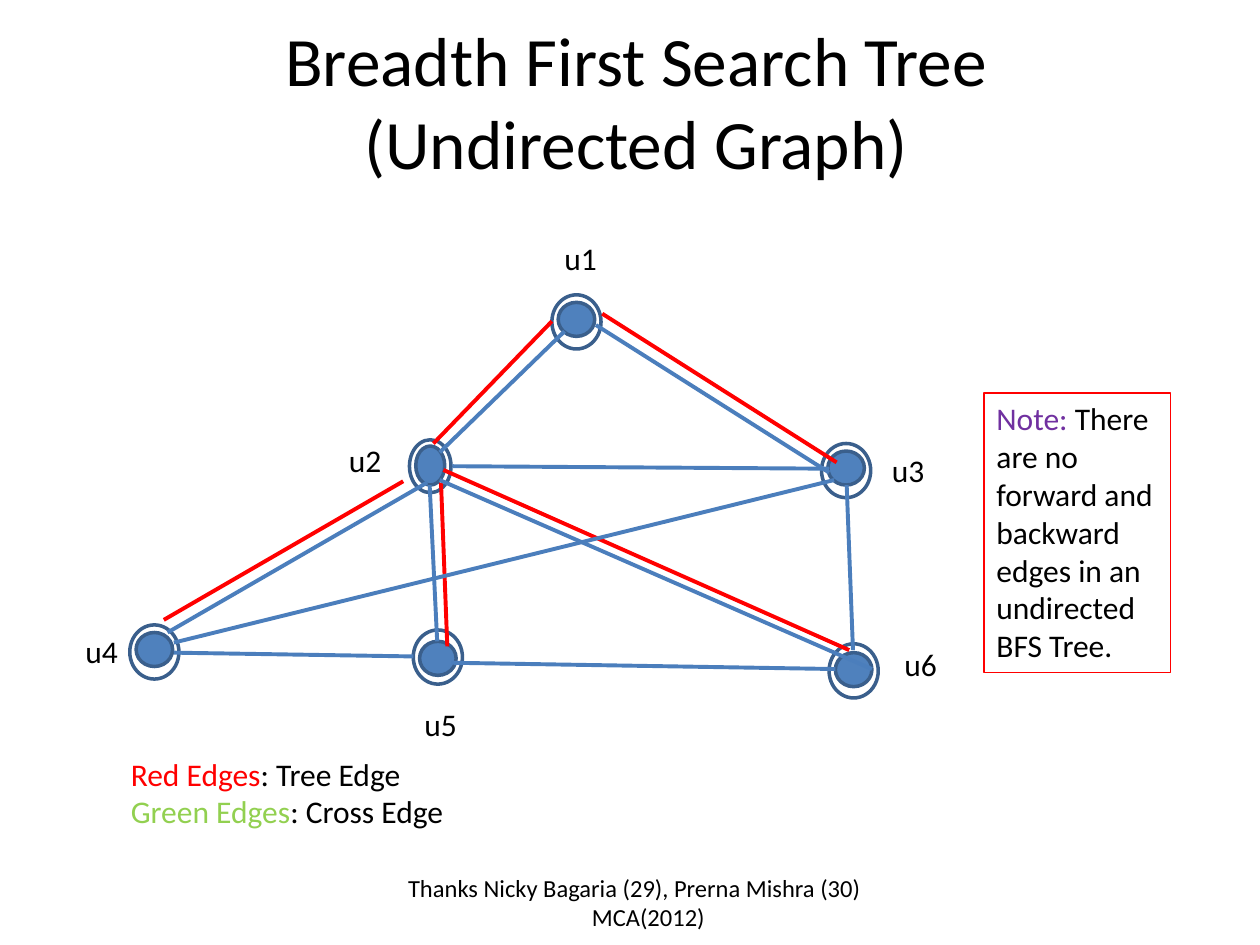
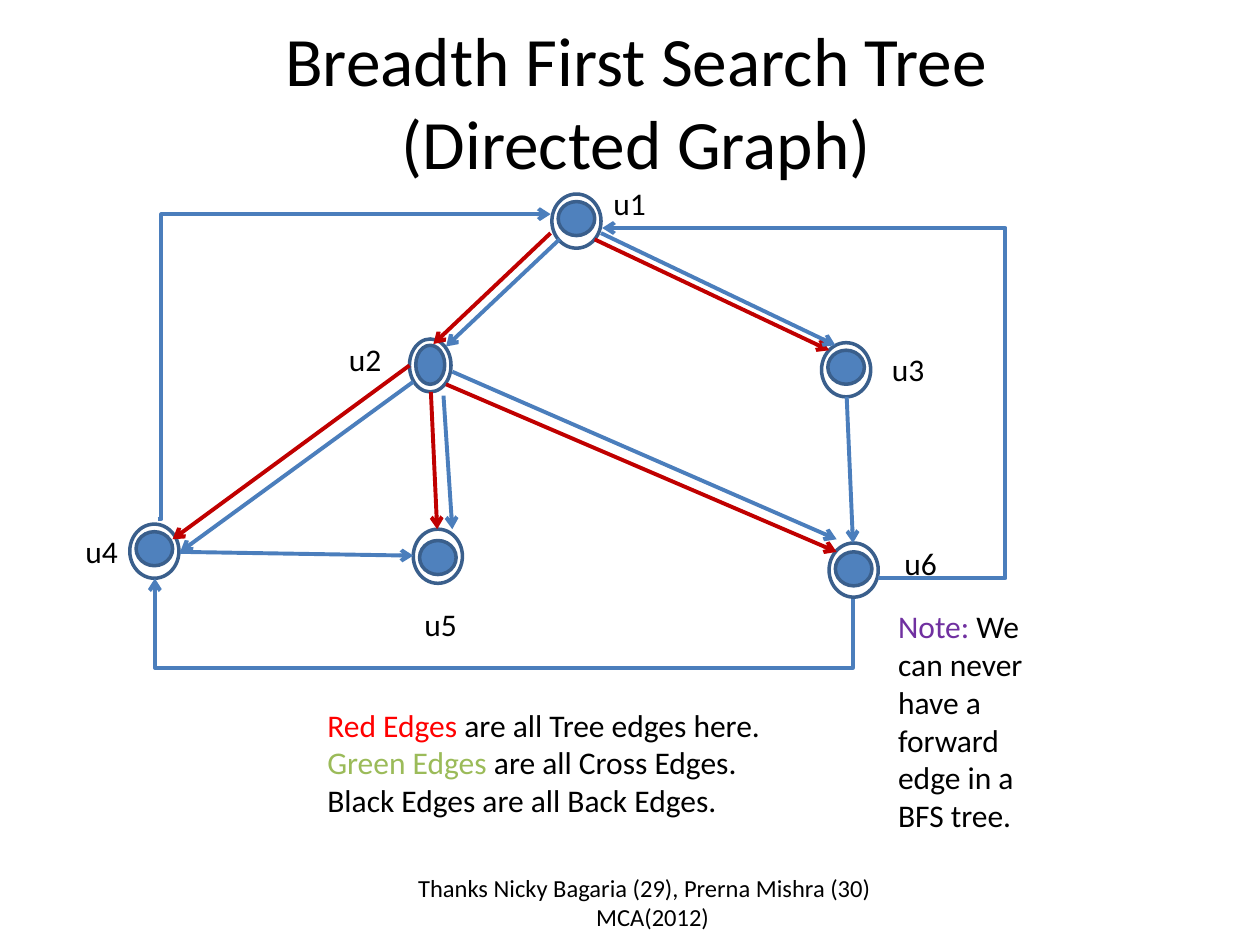
from dataclasses import dataclass

import pptx
import pptx.dml.color
import pptx.enum.shapes
import pptx.enum.text
import pptx.oxml
import pptx.oxml.ns
import pptx.util
from pptx.util import Inches

COLOURS = {
    "text": "000000",
    "node": "4F81BD",
    "outline": "3A5F8C",
    "edge": "4B7EBC",
    "red": "FF0000",
    "dark red": "C00000",
    "bright green": "92D050",
    "soft green": "9BBB59",
    "purple": "7030A0",
}
FONT = "Calibri"
BODY_SIZE = 18
EDGE_WIDTH = 2.25
DIRECTED_SHIFT = -0.8  # the directed graph sits higher on its slide
FOOTER = ("Thanks Nicky Bagaria (29), Prerna Mishra (30)", "MCA(2012)")
CENTRE = pptx.enum.text.PP_ALIGN.CENTER

Point = tuple[float, float]
Box = tuple[float, float, float, float]
Run = tuple[str, str]


@dataclass(frozen=True)
class Node:
    name: str
    ring: Point
    label: Point
    ring_size: Point = (0.39, 0.43)
    dot_size: Point = (0.29, 0.27)
    dot_drop: float = 0.06


@dataclass(frozen=True)
class Edge:
    start: Point
    end: Point
    colour: str = "edge"


@dataclass(frozen=True)
class Elbow:
    start: Point
    end: Point
    bend: float  # x of the middle leg, or y if the first leg is vertical
    vertical: bool = False


NODES = [
    Node("u1", (4.38, 2.34), (4.38, 1.85)),
    Node("u2", (3.25, 3.49), (2.67, 3.45), (0.33, 0.42), (0.23, 0.31), 0.05),
    Node("u3", (6.52, 3.52), (6.98, 3.53)),
    Node("u4", (1.03, 4.96), (0.58, 4.97)),
    Node("u5", (3.28, 5.0), (3.27, 5.55), dot_drop=0.09),
    Node("u6", (6.58, 5.11), (7.08, 5.07), dot_drop=0.07),
]

UNDIRECTED_EDGES = [
    Edge((4.48, 2.63), (3.49, 3.59)),
    Edge((3.44, 3.52), (4.38, 2.55), "red"),
    Edge((4.73, 2.58), (6.58, 3.75)),
    Edge((6.77, 5.16), (6.72, 3.85)),
    Edge((4.78, 2.49), (6.64, 3.67), "red"),
    Edge((3.5, 3.83), (3.55, 5.13), "red"),
    Edge((3.41, 3.85), (3.47, 5.09)),
    Edge((3.39, 3.83), (1.33, 5.02)),
    Edge((3.52, 3.73), (6.74, 5.16), "red"),
    Edge((3.49, 3.81), (6.92, 5.31)),
    Edge((1.3, 4.92), (3.2, 3.82), "red"),
    Edge((3.59, 3.7), (6.58, 3.72)),
    Edge((3.28, 5.21), (1.38, 5.18)),
    Edge((6.62, 3.81), (1.38, 5.1)),
    Edge((6.63, 5.31), (3.58, 5.26)),
]

DIRECTED_EDGES = [
    Edge((4.44, 1.9), (3.54, 2.75)),
    Edge((4.72, 1.9), (6.58, 2.78), "dark red"),
    Edge((3.42, 3.11), (3.47, 4.2), "dark red"),
    Edge((6.72, 3.15), (6.77, 4.31)),
    Edge((3.28, 3.03), (1.43, 4.38)),
    Edge((1.43, 4.38), (3.28, 4.41)),
    Edge((3.54, 3.05), (6.64, 4.38), "dark red"),
    Edge((4.77, 1.85), (6.63, 2.74)),
    Edge((4.37, 1.85), (3.44, 2.73), "dark red"),
    Edge((3.52, 3.14), (3.59, 4.2)),
    Edge((3.25, 2.9), (1.37, 4.28), "dark red"),
    Edge((3.59, 2.95), (6.64, 4.28)),
]

BACK_EDGES = [
    Elbow((1.25, 4.12), (4.37, 1.7), bend=1.28),
    Elbow((6.77, 4.75), (1.23, 4.59), bend=5.3, vertical=True),
    Elbow((6.97, 4.59), (4.78, 1.81), bend=7.98),
]


def rgb(name: str) -> pptx.dml.color.RGBColor:
    return pptx.dml.color.RGBColor.from_string(COLOURS[name])


def add_text(slide, box: Box, paragraphs: list[list[Run]],
             size: float = BODY_SIZE, alignment=None):
    """Write paragraphs of (text, colour) runs in a wrapping box."""
    shape = slide.shapes.add_textbox(*map(Inches, box))
    frame = shape.text_frame
    frame.word_wrap = True
    for index, runs in enumerate(paragraphs):
        paragraph = frame.paragraphs[0] if index == 0 else frame.add_paragraph()
        paragraph.font.name = FONT
        paragraph.font.size = pptx.util.Pt(size)
        paragraph.alignment = alignment
        for text, colour in runs:
            run = paragraph.add_run()
            run.text = text
            run.font.color.rgb = rgb(colour)
    return shape


def add_title(slide, graph_kind: str) -> None:
    lines = [[("Breadth First Search Tree", "text")], [(f"({graph_kind} Graph)", "text")]]
    title = add_text(slide, (0.55, 0.17, 9, 1.25), lines, 39.6, CENTRE)
    title.text_frame.vertical_anchor = pptx.enum.text.MSO_ANCHOR.MIDDLE


def add_footer(slide, left: float, width: float, indent: float) -> None:
    lines = [[(line, "text")] for line in FOOTER]
    footer = add_text(slide, (left, 6.88, width, 0.6), lines, 14, CENTRE)
    properties = footer.text_frame.paragraphs[1]._p.get_or_add_pPr()
    properties.set("marL", str(Inches(indent)))


def add_ellipse(slide, corner: Point, size: Point, fill: str | None = None) -> None:
    shape = slide.shapes.add_shape(
        pptx.enum.shapes.MSO_SHAPE.OVAL, *map(Inches, corner + size))
    shape.shadow.inherit = False
    shape.line.color.rgb = rgb("outline")
    shape.line.width = pptx.util.Pt(2)
    if fill:
        shape.fill.solid()
        shape.fill.fore_color.rgb = rgb(fill)
    else:
        shape.fill.background()


def add_nodes(slide, shift: float = 0, moved_labels: dict[str, Point] | None = None) -> None:
    for node in NODES:
        left, top = node.ring[0], node.ring[1] + shift
        inset = (node.ring_size[0] - node.dot_size[0]) / 2
        add_ellipse(slide, (left + inset, top + node.dot_drop), node.dot_size, "node")
        add_ellipse(slide, (left, top), node.ring_size)
        label = (node.label[0], node.label[1] + shift)
        label = (moved_labels or {}).get(node.name, label)
        add_text(slide, (*label, 0.65, 0.4), [[(node.name, "text")]])


def add_connector(slide, kind, start: Point, end: Point, colour: str, arrow: bool):
    connector = slide.shapes.add_connector(kind, *map(Inches, start + end))
    connector.line.color.rgb = rgb(colour)
    connector.line.width = pptx.util.Pt(EDGE_WIDTH)
    properties = connector._element.spPr
    if arrow:
        line = properties.find(pptx.oxml.ns.qn("a:ln"))
        line.append(pptx.oxml.parse_xml(
            f'<a:tailEnd {pptx.oxml.ns.nsdecls("a")} type="arrow"/>'))
    properties.append(pptx.oxml.parse_xml(
        f'<a:effectLst {pptx.oxml.ns.nsdecls("a")}/>'))
    return connector


def add_edges(slide, edges: list[Edge], arrow: bool = False) -> None:
    straight = pptx.enum.shapes.MSO_CONNECTOR.STRAIGHT
    for edge in edges:
        add_connector(slide, straight, edge.start, edge.end, edge.colour, arrow)


def add_elbow(slide, elbow: Elbow) -> None:
    start, end = elbow.start, elbow.end
    axis = 1 if elbow.vertical else 0
    adjustment = (elbow.bend - start[axis]) / (end[axis] - start[axis])
    if elbow.vertical:
        # Lay the ends out a quarter turn back; the rotation restores them
        x, y = (start[0] + end[0]) / 2, (start[1] + end[1]) / 2
        start, end = [(x + p[1] - y, y - p[0] + x) for p in (start, end)]
    connector = add_connector(
        slide, pptx.enum.shapes.MSO_CONNECTOR.ELBOW, start, end, "edge", True)
    properties = connector._element.spPr
    if elbow.vertical:
        properties.find(pptx.oxml.ns.qn("a:xfrm")).set("rot", str(90 * 60000))
    geometry = properties.find(pptx.oxml.ns.qn("a:prstGeom"))
    for child in list(geometry):
        geometry.remove(child)
    geometry.append(pptx.oxml.parse_xml(
        f'<a:avLst {pptx.oxml.ns.nsdecls("a")}>'
        f'<a:gd name="adj1" fmla="val {round(adjustment * 100000)}"/></a:avLst>'))


def build_undirected(slide) -> None:
    add_title(slide, "Undirected")
    add_nodes(slide)
    add_edges(slide, UNDIRECTED_EDGES)
    # Note and legend
    note = add_text(slide, (7.81, 3.12, 1.48, 2.22), [[
        ("Note: ", "purple"),
        ("There are no forward and backward edges in an undirected BFS Tree.", "text")]])
    note.line.color.rgb = rgb("red")
    note.line.width = pptx.util.Pt(0.75)
    add_text(slide, (0.94, 5.94, 2.97, 0.71), [
        [("Red Edges", "red"), (": Tree Edge", "text")],
        [("Green Edges", "bright green"), (": Cross Edge", "text")]])
    add_footer(slide, 2.34, 5.39, indent=0.22)


def build_directed(slide) -> None:
    add_title(slide, "Directed")
    add_nodes(slide, DIRECTED_SHIFT, {"u1": (4.77, 1.41)})
    add_edges(slide, DIRECTED_EDGES, arrow=True)
    for elbow in BACK_EDGES:
        add_elbow(slide, elbow)
    # Note and legend
    add_text(slide, (7.03, 4.77, 1.33, 1.92), [[
        ("Note:", "purple"),
        (" We can never have a forward edge in a BFS tree.", "text")]])
    add_text(slide, (2.5, 5.55, 4.3, 1.01), [
        [("Red Edges", "red"), (" are all Tree edges here.", "text")],
        [("Green Edges", "soft green"), (" are all Cross Edges.", "text")],
        [("Black Edges are all Back Edges.", "text")]])
    add_footer(slide, 2.73, 4.77, indent=0.13)


def main() -> None:
    presentation = pptx.Presentation()
    presentation.slide_width = Inches(10)
    presentation.slide_height = Inches(7.5)
    blank = presentation.slide_layouts[6]
    for build in (build_undirected, build_directed):
        build(presentation.slides.add_slide(blank))
    presentation.save("out.pptx")


if __name__ == "__main__":
    main()
